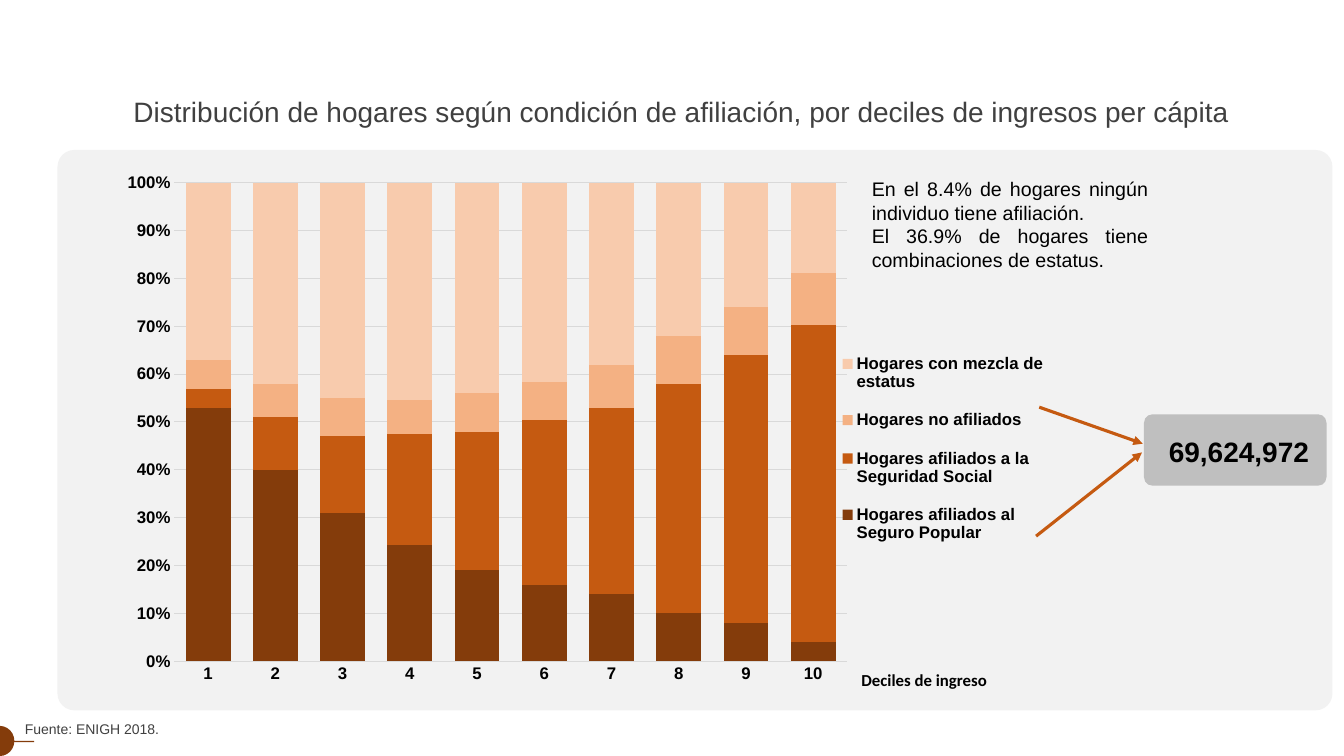
from dataclasses import dataclass

from lxml import etree
from pptx import Presentation
from pptx.chart.data import CategoryChartData
from pptx.dml.color import RGBColor
from pptx.enum.chart import XL_CHART_TYPE, XL_LEGEND_POSITION, XL_TICK_MARK
from pptx.enum.shapes import MSO_CONNECTOR, MSO_SHAPE
from pptx.enum.text import MSO_ANCHOR, MSO_AUTO_SIZE, PP_ALIGN
from pptx.oxml import parse_xml
from pptx.oxml.ns import nsdecls, qn
from pptx.util import Cm, Pt

STACKED_100 = XL_CHART_TYPE.COLUMN_STACKED_100
LEGEND_RIGHT = XL_LEGEND_POSITION.RIGHT
NO_TICK = XL_TICK_MARK.NONE
STRAIGHT = MSO_CONNECTOR.STRAIGHT
RECT, ROUNDED, PIE = MSO_SHAPE.RECTANGLE, MSO_SHAPE.ROUNDED_RECTANGLE, MSO_SHAPE.PIE
LEFT, CENTER, JUSTIFY = PP_ALIGN.LEFT, PP_ALIGN.CENTER, PP_ALIGN.JUSTIFY
TOP = MSO_ANCHOR.TOP
NO_AUTOFIT = MSO_AUTO_SIZE.NONE


@dataclass(frozen=True)
class Theme:
    font: str = "Arial"
    axis_note_font: str = "Calibri"
    text: str = "000000"
    muted: str = "404040"
    panel: str = "F2F2F2"
    badge: str = "BFBFBF"
    grid: str = "D9D9D9"
    brown: str = "843C0B"
    orange: str = "C55A11"
    series: tuple = ("843C0B", "C55A11", "F4B183", "F8CBAD")
    title_size: int = 20
    body_size: int = 14
    label_size: int = 12
    source_size: int = 10


def rgb(value):
    return RGBColor.from_string(value)


def manual_layout(x, y, w, h, inner=False):
    target = '<c:layoutTarget val="inner"/>' if inner else ""
    return parse_xml(
        f'<c:layout {nsdecls("c")}><c:manualLayout>{target}'
        '<c:xMode val="edge"/><c:yMode val="edge"/>'
        f'<c:x val="{x}"/><c:y val="{y}"/><c:w val="{w}"/><c:h val="{h}"/>'
        "</c:manualLayout></c:layout>")


class SlideBuilder:
    def __init__(self, slide, theme):
        self.s = slide
        self.theme = theme

    def style_font(self, font, size, color=None, bold=False, name=None):
        font.name = name or self.theme.font
        font.size = Pt(size)
        font.bold = bold
        font.color.rgb = rgb(color or self.theme.text)

    def set_text(self, sp, lines, size, align=LEFT, wrap=True, **style):
        tf = sp.text_frame
        tf.text = "\n".join(lines)
        tf.word_wrap = wrap
        tf.auto_size = NO_AUTOFIT
        tf.vertical_anchor = TOP
        for p in tf.paragraphs:
            p.alignment = align
            for r in p.runs:
                self.style_font(r.font, size, **style)

    def title(self, box, text):
        sp = self.s.shapes.title
        sp.left, sp.top, sp.width, sp.height = map(Cm, box)
        self.set_text(sp, [text], self.theme.title_size, CENTER, wrap=False,
                      color=self.theme.muted)

    def text(self, box, line, size, align=LEFT, **style):
        sp = self.s.shapes.add_textbox(*map(Cm, box))
        self.set_text(sp, [line], size, align, **style)

    def shape(self, kind, box, fill, adjustments=(), rotation=0):
        sp = self.s.shapes.add_shape(kind, *map(Cm, box))
        sp.shadow.inherit = False
        sp.fill.solid()
        sp.fill.fore_color.rgb = rgb(fill)
        sp.line.fill.background()
        sp.rotation = rotation
        for i, value in enumerate(adjustments):
            sp.adjustments[i] = value
        return sp

    def arrow(self, start, end):
        cx = self.s.shapes.add_connector(STRAIGHT, *map(Cm, start + end))
        cx.line.color.rgb = rgb(self.theme.orange)
        cx.line.width = Pt(2.25)
        ln = cx.element.find(".//" + qn("a:ln"))
        etree.SubElement(ln, qn("a:tailEnd"), type="triangle")
        etree.SubElement(ln.getparent(), qn("a:effectLst"))

    def chart(self, box, categories, series, plot_area, legend_area):
        theme = self.theme
        data = CategoryChartData(number_format="#,##0")
        data.categories = categories
        for name, values in series:
            data.add_series(name, values)
        chart = self.s.shapes.add_chart(STACKED_100, *map(Cm, box), data).chart
        chart.has_title = False
        self.style_font(chart.font, theme.label_size, bold=True)

        # Columns
        plot = chart.plots[0]
        plot.gap_width, plot.overlap = 50, 100
        plot.vary_by_categories = False
        for ser, color in zip(plot.series, theme.series):
            ser.format.fill.solid()
            ser.format.fill.fore_color.rgb = rgb(color)

        # Axes
        cat, val = chart.category_axis, chart.value_axis
        for axis in (cat, val):
            axis.major_tick_mark = axis.minor_tick_mark = NO_TICK
            self.style_font(axis.tick_labels.font, theme.label_size, bold=True)
        val.minimum_scale, val.maximum_scale, val.major_unit = 0, 1, 0.1
        val.tick_labels.number_format = "0%"
        val.tick_labels.number_format_is_linked = False
        val.format.line.fill.background()
        for line in (cat.format.line, val.major_gridlines.format.line):
            line.color.rgb = rgb(theme.grid)
            line.width = Pt(0.75)

        # Legend
        chart.has_legend = True
        chart.legend.position = LEGEND_RIGHT
        chart.legend.include_in_layout = False
        self.style_font(chart.legend.font, theme.label_size, bold=True)

        # Fixed areas and transparent background
        space = chart.element
        area = space.find(".//" + qn("c:plotArea"))
        legend = space.find(".//" + qn("c:legend"))
        for part in (area, legend):
            for old in part.findall(qn("c:layout")):
                part.remove(old)
        area.insert(0, manual_layout(*plot_area, inner=True))
        legend.find(qn("c:legendPos")).addnext(manual_layout(*legend_area))
        space.find(qn("c:chart")).addnext(parse_xml(
            f'<c:spPr {nsdecls("c", "a")}><a:noFill/><a:ln><a:noFill/></a:ln></c:spPr>'))


def main():
    prs = Presentation()
    prs.slide_width, prs.slide_height = Cm(33.87), Cm(19.05)
    theme = Theme()
    b = SlideBuilder(prs.slides.add_slide(prs.slide_layouts[5]), theme)

    # Title, panel and captions
    b.title((3, 2.26, 28.35, 1.12),
            "Distribución de hogares según condición de afiliación, "
            "por deciles de ingresos per cápita")
    b.shape(ROUNDED, (1.45, 3.78, 32.13, 14.12), theme.panel, [0.03])
    b.text((0.38, 18.03, 12.7, 0.69), "Fuente: ENIGH 2018.",
           theme.source_size, color=theme.muted)
    b.text((21.46, 16.76, 5.79, 0.76), "Deciles de ingreso",
           theme.label_size, bold=True, name=theme.axis_note_font)

    # Households by income decile
    b.chart((2.46, 2.84, 24.21, 14.71), [str(n) for n in range(1, 11)], [
        ("Hogares afiliados al Seguro Popular", (53, 40, 31, 24, 19, 16, 14, 10, 8, 4)),
        ("Hogares afiliados a la Seguridad Social", (4, 11, 16, 23, 29, 35, 39, 48, 56, 67)),
        ("Hogares no afiliados", (6, 7, 8, 7, 8, 8, 9, 10, 10, 11)),
        ("Hogares con mezcla de estatus", (37, 42, 45, 45, 44, 42, 38, 32, 26, 19)),
    ], plot_area=(0.08, 0.12, 0.7, 0.82), legend_area=(0.77, 0.38, 0.22, 0.39))

    # Key findings
    note = b.shape(RECT, (21.72, 4.34, 7.47, 2.64), theme.panel)
    b.set_text(note, ["En el 8.4% de hogares ningún individuo tiene afiliación.",
                      "El 36.9% de hogares tiene combinaciones de estatus."],
               theme.body_size, JUSTIFY)

    # Corner ornament
    b.shape(RECT, (0.05, 18.67, 0.81, 0.03), theme.brown)
    b.shape(PIE, (-0.38, 18.29, 0.74, 0.76), theme.brown, [54.22, 162], rotation=180)

    # Arrows to the combined total
    b.arrow((26.19, 10.26), (28.8, 11.18))
    b.arrow((26.11, 13.51), (28.78, 11.4))
    b.shape(ROUNDED, (28.83, 10.44, 4.6, 1.8), theme.badge, [0.12])
    b.text((28.85, 10.82, 4.75, 1.12), "69,624,972", theme.title_size, CENTER, bold=True)

    prs.save("out.pptx")


if __name__ == "__main__":
    main()
